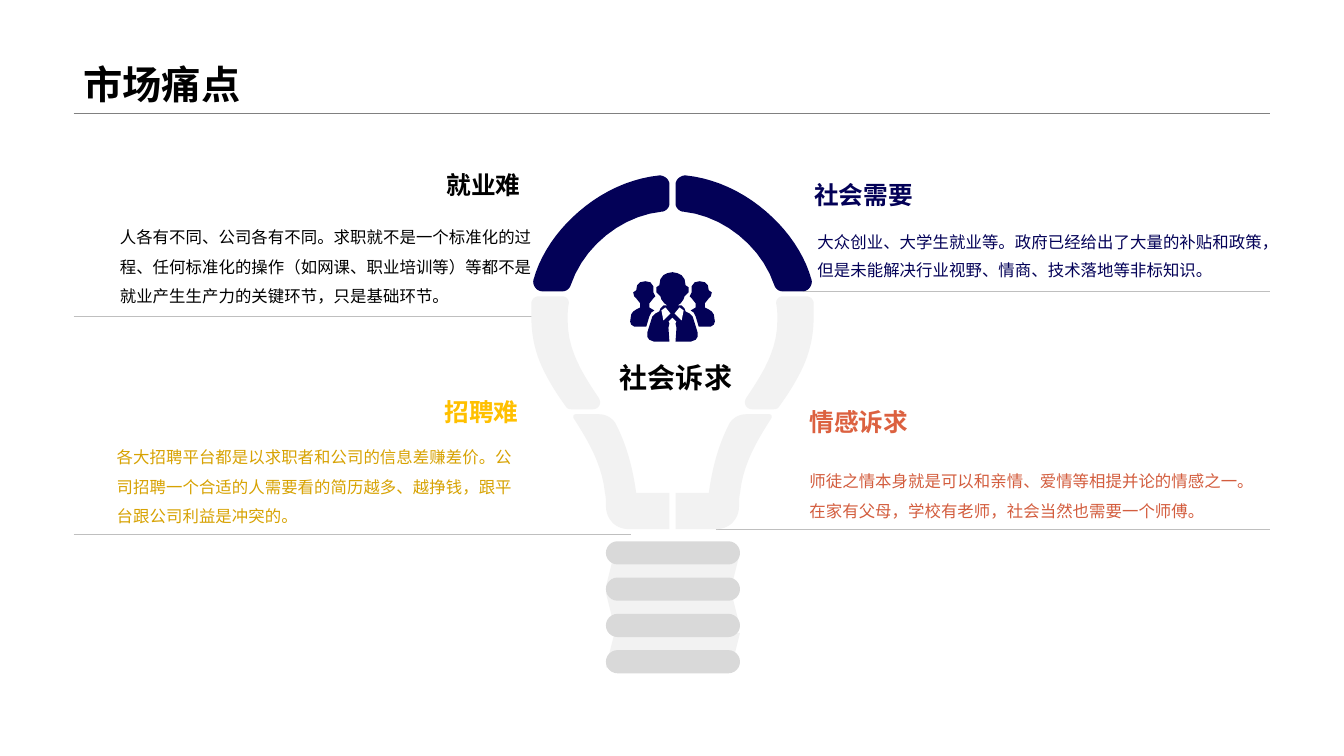
from lxml import etree
from pptx import Presentation
from pptx.dml.color import RGBColor
from pptx.enum.shapes import MSO_CONNECTOR, MSO_SHAPE
from pptx.enum.text import MSO_ANCHOR, MSO_AUTO_SIZE, PP_ALIGN
from pptx.oxml.ns import qn
from pptx.util import Inches, Pt

STRAIGHT = MSO_CONNECTOR.STRAIGHT
PARALLELOGRAM, ROUNDED = MSO_SHAPE.PARALLELOGRAM, MSO_SHAPE.ROUNDED_RECTANGLE
TOP, BOTTOM = MSO_ANCHOR.TOP, MSO_ANCHOR.BOTTOM
LEFT, CENTER = PP_ALIGN.LEFT, PP_ALIGN.CENTER
NO_AUTOFIT = MSO_AUTO_SIZE.NONE

BLACK = RGBColor(0x00, 0x00, 0x00)
WHITE = RGBColor(0xFF, 0xFF, 0xFF)
NAVY = RGBColor(0x03, 0x01, 0x57)
AMBER = RGBColor(0xFF, 0xC0, 0x00)
DARK_AMBER = RGBColor(0xD7, 0xA2, 0x02)
CORAL = RGBColor(0xDC, 0x61, 0x40)
DARK_CORAL = RGBColor(0xD3, 0x5D, 0x3E)
GLASS = RGBColor(0xF2, 0xF2, 0xF2)
SCREW = RGBColor(0xD9, 0xD9, 0xD9)
RULE = RGBColor(0xBF, 0xBF, 0xBF)
TITLE_RULE = RGBColor(0x80, 0x80, 0x80)
FONT = "Arial"
BULB_AXIS, ICON_AXIS = 6.67, 6.67
CURVE_STEPS = 10


def draw_outline(points, color):
    builder = slide.shapes.build_freeform(
        Inches(points[0][0]), Inches(points[0][1]))
    builder.add_line_segments([(Inches(x), Inches(y)) for x, y in points[1:]])
    outline = builder.convert_to_shape()
    outline.shadow.inherit = False
    outline.fill.solid()
    outline.fill.fore_color.rgb = color
    outline.line.fill.background()


def fill_text(frame, lines, size, color, bold, anchor, align, spacing):
    frame.word_wrap = True
    frame.auto_size = NO_AUTOFIT
    frame.vertical_anchor = anchor
    for number, line in enumerate(lines):
        paragraph = frame.add_paragraph() if number else frame.paragraphs[0]
        paragraph.alignment = align
        paragraph.line_spacing = spacing
        run = paragraph.add_run()
        run.text = line
        run.font.name = FONT
        run.font.size = Pt(size)
        run.font.bold = bold
        run.font.color.rgb = color


prs = Presentation()
prs.slide_width, prs.slide_height = Inches(13.33), Inches(7.5)
slide = prs.slides.add_slide(prs.slide_layouts[5])

title = slide.shapes.title
title.left, title.top = Inches(0.73), Inches(0)
title.width, title.height = Inches(11.87), Inches(1.12)
fill_text(title.text_frame, ["市场痛点"], 28, BLACK, True, BOTTOM, LEFT, 0.9)

# Rules under the title and under each topic
for start, end, y, color in [
    (0.73, 12.6, 1.12, TITLE_RULE),
    (0.73, 5.4, 3.14, RULE),
    (7.96, 12.6, 2.89, RULE),
    (7.1, 12.6, 5.25, RULE),
    (0.73, 6.26, 5.3, RULE),
]:
    rule = slide.shapes.add_connector(
        STRAIGHT, Inches(start), Inches(y), Inches(end), Inches(y))
    rule.line.color.rgb = color
    rule.line.width = Pt(0.25)
    etree.SubElement(rule._element.spPr, qn("a:effectLst"))

# Screw base: slanted threads behind rounded rings
threads = [(PARALLELOGRAM, 5.48 + 0.4 * i, 0.34, GLASS) for i in range(3)]
rings = [(ROUNDED, 5.37 + 0.36 * i, 0.23, SCREW) for i in range(4)]
for preset, top, height, color in threads + rings:
    part = slide.shapes.add_shape(
        preset, Inches(6.01), Inches(top), Inches(1.33), Inches(height))
    part.shadow.inherit = False
    part.fill.solid()
    part.fill.fore_color.rgb = color
    part.line.fill.background()
    if preset == ROUNDED:
        part.adjustments[0] = 0.5
    elif color == GLASS and top == threads[1][1]:
        part._element.spPr.find(qn("a:xfrm")).set("flipH", "1")

# Right half of the glass: a start point, then lines (1 point) and cubics (3)
crown = [
    [(6.7, 1.83)], [(6.7, 2.02)],
    [(6.7, 2.06), (6.74, 2.1), (6.78, 2.1)],
    [(7.17, 2.14), (7.55, 2.44), (7.68, 2.83)],
    [(7.69, 2.86), (7.72, 2.89), (7.76, 2.89)], [(7.96, 2.89)],
    [(8.02, 2.89), (8.06, 2.83), (8.05, 2.78)],
    [(7.98, 2.52), (7.81, 2.28), (7.6, 2.1)],
    [(7.37, 1.9), (7.09, 1.77), (6.8, 1.74)],
    [(6.75, 1.74), (6.7, 1.78), (6.7, 1.83)],
]
side = [
    [(8.07, 3.14)],
    [(8.07, 3.31), (8.04, 3.45), (7.99, 3.58)],
    [(7.92, 3.75), (7.83, 3.89), (7.73, 4.03)],
    [(7.72, 4.05), (7.7, 4.06), (7.67, 4.06)], [(7.46, 4.06)],
    [(7.4, 4.06), (7.37, 4), (7.4, 3.95)],
    [(7.56, 3.71), (7.71, 3.48), (7.71, 3.18)],
    [(7.71, 3.12), (7.71, 3.07), (7.7, 3.02)],
    [(7.69, 2.98), (7.72, 2.94), (7.76, 2.94)], [(8, 2.94)],
    [(8.03, 2.94), (8.06, 2.96), (8.07, 3)],
    [(8.07, 3.04), (8.07, 3.09), (8.07, 3.14)],
]
neck = [
    [(6.7, 4.89)], [(6.7, 5.25)], [(7.1, 5.25)],
    [(7.16, 5.25), (7.22, 5.23), (7.26, 5.19)],
    [(7.31, 5.14), (7.33, 5.08), (7.33, 5.02)],
    [(7.33, 4.98), (7.33, 4.93), (7.34, 4.89)],
    [(7.37, 4.6), (7.51, 4.37), (7.65, 4.15)],
    [(7.66, 4.13), (7.65, 4.11), (7.63, 4.11)], [(7.4, 4.11)],
    [(7.33, 4.11), (7.26, 4.15), (7.23, 4.21)],
    [(7.14, 4.39), (7.07, 4.6), (7.03, 4.89)], [(6.7, 4.89)],
]
for segments, color in [(crown, NAVY), (side, GLASS), (neck, GLASS)]:
    points = []
    for segment in segments:
        if len(segment) == 1:
            points += segment
            continue
        bezier = [points[-1]] + segment
        for step in range(1, CURVE_STEPS + 1):
            t = step / CURVE_STEPS
            weights = [(1 - t) ** 3, 3 * t * (1 - t) ** 2,
                       3 * t ** 2 * (1 - t), t ** 3]
            points.append(tuple(sum(w * p[axis] for w, p in zip(weights, bezier))
                                for axis in (0, 1)))
    draw_outline(points, color)
    draw_outline([(2 * BULB_AXIS - x, y) for x, y in points], color)

# Group of people: right half of the leader, a colleague and a collar flap
leader = [
    (6.67, 2.7), (6.72, 2.71), (6.76, 2.73), (6.79, 2.77), (6.8, 2.83),
    (6.83, 2.85), (6.83, 2.9), (6.79, 2.94), (6.78, 2.97), (6.75, 3.01),
    (6.72, 3.03), (6.76, 3.03), (6.79, 3.06), (6.8, 3.09), (6.84, 3.11),
    (6.87, 3.14), (6.92, 3.3), (6.92, 3.34), (6.9, 3.37), (6.85, 3.39),
    (6.7, 3.39), (6.71, 3.25), (6.7, 3.21), (6.71, 3.19), (6.67, 3.15),
]
colleague = [
    (6.94, 2.79), (6.99, 2.8), (7.02, 2.83), (7.03, 2.88), (7.06, 2.9),
    (7.05, 2.94), (7.03, 2.96), (6.99, 3.01), (6.99, 3.05), (7.03, 3.07),
    (7.06, 3.09), (7.08, 3.12), (7.09, 3.19), (7.08, 3.22), (7.05, 3.24),
    (6.93, 3.24), (6.9, 3.14), (6.88, 3.1), (6.85, 3.08), (6.9, 3.05),
    (6.9, 3.01), (6.86, 2.96), (6.84, 2.94), (6.86, 2.9), (6.86, 2.84),
    (6.89, 2.8),
]
collar = [(6.74, 3.05), (6.69, 3.11), (6.76, 3.18), (6.78, 3.08)]
draw_outline(
    leader + [(2 * ICON_AXIS - x, y) for x, y in reversed(leader)], NAVY)
for points, color in [(colleague, NAVY), (collar, WHITE)]:
    draw_outline(points, color)
    draw_outline([(2 * ICON_AXIS - x, y) for x, y in points], color)

headings = [
    (4.64, 3.28, 4.13, 0.68, "社会诉求", 20, BLACK, CENTER),
    (4.33, 1.64, 1.14, 0.39, "就业难", 17.6, BLACK, LEFT),
    (4.31, 3.89, 1.16, 0.39, "招聘难", 17.6, AMBER, LEFT),
    (7.1, 1.74, 2.93, 0.39, "社会需要", 17.6, NAVY, CENTER),
    (7.93, 3.99, 1.41, 0.39, "情感诉求", 17.6, CORAL, LEFT),
]
for left, top, width, height, heading, size, color, align in headings:
    box = slide.shapes.add_textbox(
        Inches(left), Inches(top), Inches(width), Inches(height))
    fill_text(box.text_frame, [heading], size, color, True, BOTTOM, align, 1.0)

details = [
    (1.09, 2.11, 4.28, 1.02, 1.5, BLACK,
     ["人各有不同、公司各有不同。求职就不是一个标准化的过程、任何标准化的操作"
      "（如网课、职业培训等）等都不是就业产生生产力的关键环节，只是基础环节。"]),
    (1.06, 4.29, 4.23, 1.27, 1.5, DARK_AMBER,
     ["各大招聘平台都是以求职者和公司的信息差赚差价。公司招聘一个合适的人需要看的"
      "简历越多、越挣钱，跟平台跟公司利益是冲突的。"]),
    (8.01, 2.18, 4.63, 0.69, 1.4, NAVY,
     ["大众创业、大学生就业等。政府已经给出了大量的补贴和政策，"
      "但是未能解决行业视野、情商、技术落地等非标知识。"]),
    (7.93, 4.53, 4.64, 0.96, 1.5, DARK_CORAL,
     ["师徒之情本身就是可以和亲情、爱情等相提并论的情感之一。",
      "在家有父母，学校有老师，社会当然也需要一个师傅。"]),
]
for left, top, width, height, spacing, color, lines in details:
    box = slide.shapes.add_textbox(
        Inches(left), Inches(top), Inches(width), Inches(height))
    fill_text(box.text_frame, lines, 11.7, color, False, TOP, LEFT, spacing)

prs.save("out.pptx")
